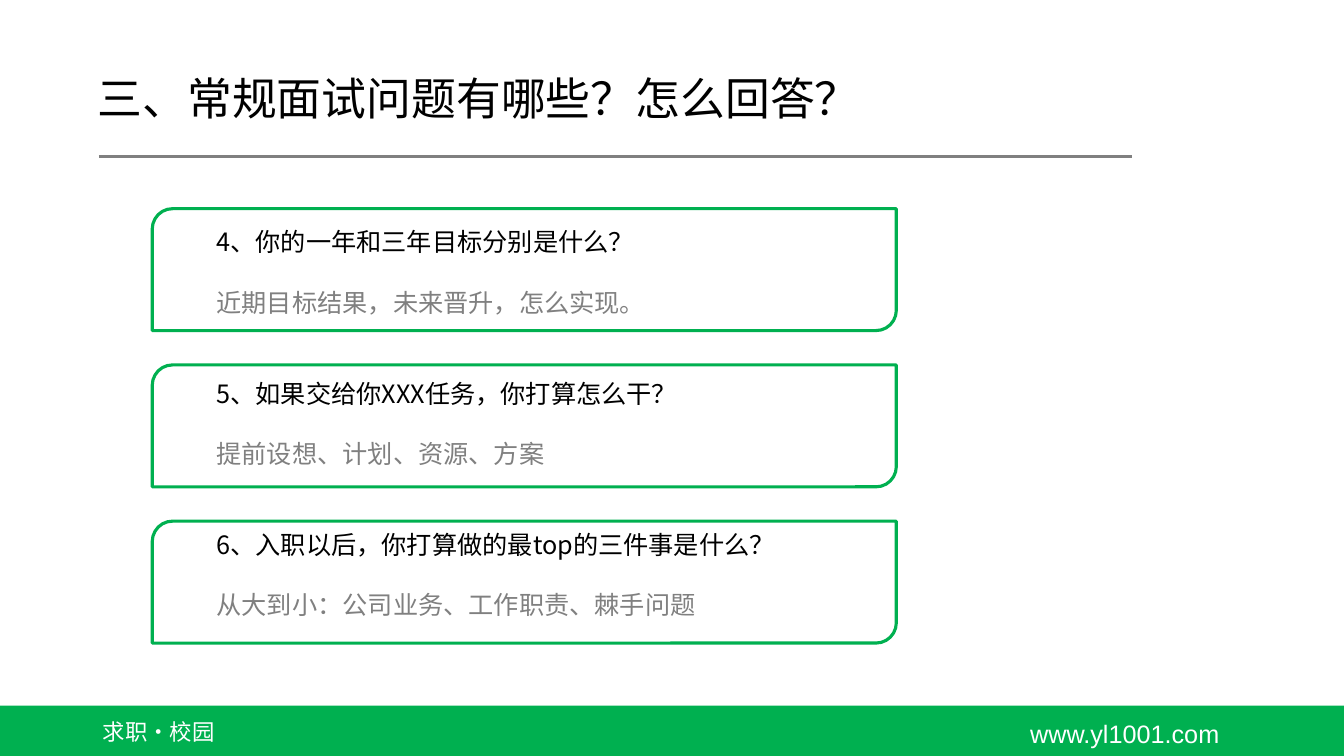
from lxml import etree
from pptx import Presentation
from pptx.dml.color import RGBColor
from pptx.enum.shapes import MSO_CONNECTOR, MSO_SHAPE
from pptx.enum.text import MSO_ANCHOR
from pptx.oxml.ns import qn
from pptx.util import Inches, Pt

GREEN = RGBColor(0x00, 0xB0, 0x50)
GRAY = RGBColor(0x80, 0x80, 0x80)
BLACK = RGBColor(0x00, 0x00, 0x00)
WHITE = RGBColor(0xFF, 0xFF, 0xFF)
RECTANGLE = MSO_SHAPE.RECTANGLE
CARD_SHAPE = MSO_SHAPE.ROUND_2_DIAG_RECTANGLE
STRAIGHT = MSO_CONNECTOR.STRAIGHT
TOP, MIDDLE = MSO_ANCHOR.TOP, MSO_ANCHOR.MIDDLE
CHINESE_FONT = "Noto Sans CJK SC"
LINE_HEIGHT = 21.6

QUESTIONS = [
    ("4、你的一年和三年目标分别是什么？", "近期目标结果，未来晋升，怎么实现。"),
    ("5、如果交给你XXX任务，你打算怎么干？", "提前设想、计划、资源、方案"),
    ("6、入职以后，你打算做的最top的三件事是什么？", "从大到小：公司业务、工作职责、棘手问题"),
]

presentation = Presentation()
presentation.slide_width = Inches(13.33)
presentation.slide_height = Inches(7.5)
slide = presentation.slides.add_slide(presentation.slide_layouts[6])


def add_text_box(left, top, width, height, anchor=TOP):
    text_frame = slide.shapes.add_textbox(
        Inches(left), Inches(top), Inches(width), Inches(height)).text_frame
    text_frame.word_wrap = True
    text_frame.vertical_anchor = anchor
    return text_frame


def write(paragraph, text, size=18, color=BLACK, font=CHINESE_FONT,
          line_spacing=None, space_before=None):
    run = paragraph.add_run()
    run.text = text
    run.font.size = Pt(size)
    run.font.color.rgb = color
    run.font.name = font
    east_asian = etree.SubElement(run.font._element, qn("a:ea"))
    east_asian.set("typeface", CHINESE_FONT)
    paragraph.line_spacing = line_spacing
    paragraph.space_before = space_before


# Footer
footer = slide.shapes.add_shape(
    RECTANGLE, Inches(0), Inches(7), Inches(13.33), Inches(0.5))
footer.shadow.inherit = False
footer.fill.solid()
footer.fill.fore_color.rgb = GREEN
footer.line.fill.background()
footer_name = add_text_box(0.92, 7.07, 5.15, 0.39)
write(footer_name.paragraphs[0], "求职·校园", size=16, color=WHITE)
footer_address = add_text_box(10.12, 7.08, 2.76, 0.4)
write(footer_address.paragraphs[0], "www.yl1001.com", color=WHITE, font="Arial")

# Title and rule
title = add_text_box(0.87, 0.4, 10.49, 1.2, anchor=MIDDLE)
write(title.paragraphs[0], "三、常规面试问题有哪些？怎么回答？",
      size=32, font="Arial", line_spacing=0.9)
rule = slide.shapes.add_connector(
    STRAIGHT, Inches(0.98), Inches(1.55), Inches(11.23), Inches(1.55))
rule.line.color.rgb = GRAY
rule.line.width = Pt(2.25)
etree.SubElement(rule._element.spPr, qn("a:effectLst"))

# Questions with answers, each pair framed by a card
questions = add_text_box(2.05, 2.2, 6.13, 4.04)
for index, (question, answer) in enumerate(QUESTIONS):
    paragraph = questions.add_paragraph() if index else questions.paragraphs[0]
    write(paragraph, question, line_spacing=Pt(LINE_HEIGHT),
          space_before=Pt(2 * LINE_HEIGHT) if index else None)
    write(questions.add_paragraph(), answer, color=GRAY,
          line_spacing=Pt(LINE_HEIGHT), space_before=Pt(LINE_HEIGHT))

    card = slide.shapes.add_shape(
        CARD_SHAPE, Inches(1.51), Inches(2.07 + 1.55 * index),
        Inches(7.38), Inches(1.21))
    card.shadow.inherit = False
    card.fill.background()
    card.line.color.rgb = GREEN
    card.line.width = Pt(2.25)

presentation.save("out.pptx")
